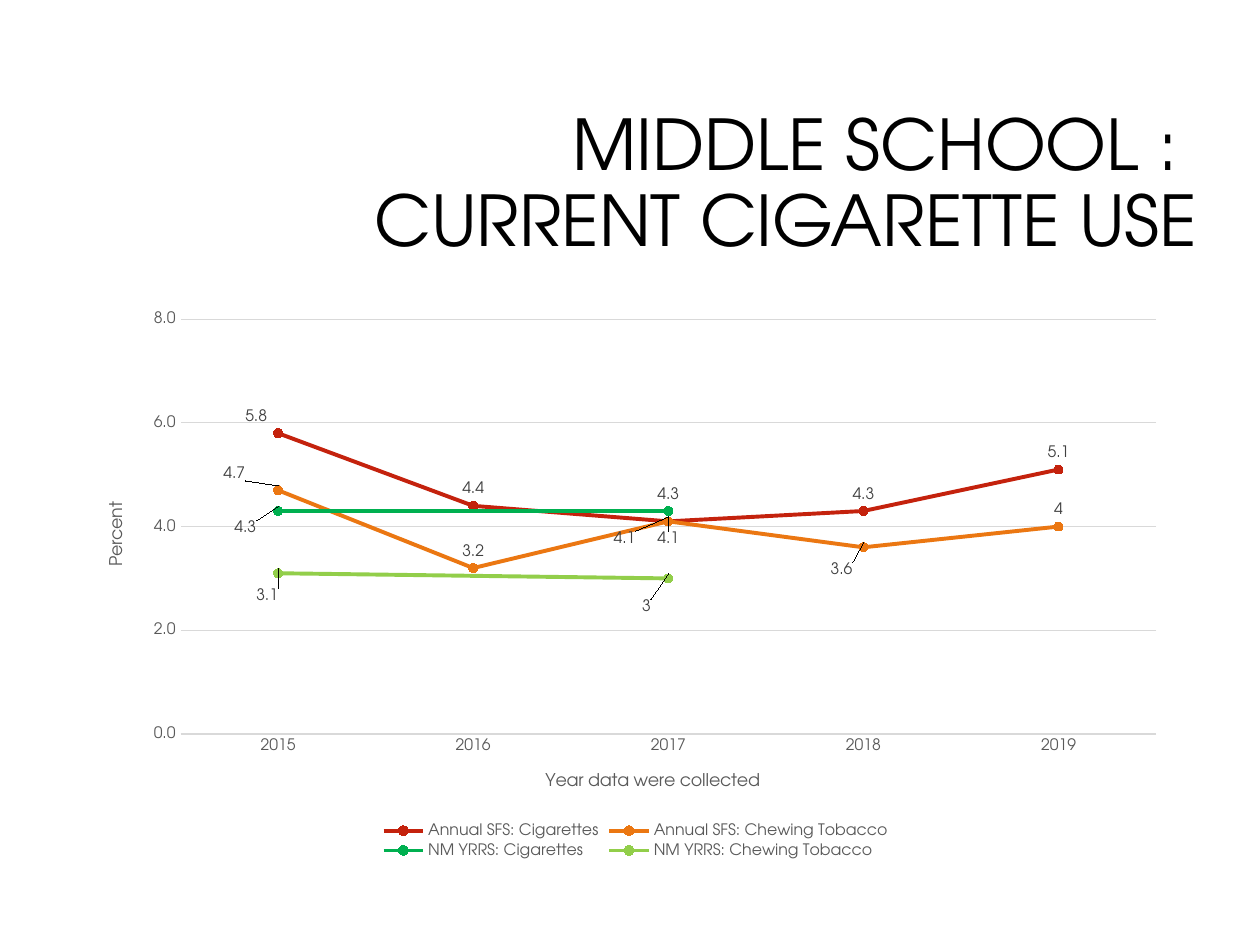
"""Build a slide charting middle school tobacco use by year."""
from dataclasses import dataclass, field

from lxml import etree
from pptx import Presentation
from pptx import util as u
from pptx.chart.data import CategoryChartData
from pptx.dml.color import RGBColor
from pptx.enum import chart as kinds
from pptx.enum import dml, text
from pptx.oxml.ns import qn


@dataclass(frozen=True)
class Theme:
    font: str = "TeX Gyre Adventor"
    ink: str = "000000"
    muted: str = "595959"
    label: str = "404040"
    grid: str = "D9D9D9"
    heading: int = 40
    axis_title: int = 10
    small: int = 9
    line: float = 2.25
    hairline: float = 0.75
    marker: int = 5


@dataclass(frozen=True)
class Trend:
    name: str
    values: tuple[float | None, ...]
    color: str
    label_shifts: dict[int, tuple[float, float]] = field(default_factory=dict)


THEME = Theme()
YEARS = ("2015", "2016", "2017", "2018", "2019")
TRENDS = (
    Trend("Annual SFS: Cigarettes", (5.8, 4.4, 4.1, 4.3, 5.1), "C4220D",
          {0: (-0.02, 0), 2: (-0.04, 0.06)}),
    Trend("Annual SFS: Chewing Tobacco", (4.7, 3.2, 4.1, 3.6, 4), "EB7712",
          {0: (-0.04, 0), 1: (0, 0), 2: (0, 0.06), 3: (-0.02, 0.07)}),
    Trend("NM YRRS: Cigarettes", (4.3, None, 4.3, None, None), "00B050",
          {0: (-0.03, 0.06)}),
    Trend("NM YRRS: Chewing Tobacco", (3.1, None, 3, None, None), "92CE4A",
          {0: (-0.01, 0.07), 2: (-0.02, 0.08)}),
)


def style_font(font, size: float, color: str) -> None:
    font.name = THEME.font
    font.size = u.Pt(size)
    font.bold = False
    font.color.rgb = RGBColor.from_string(color)


def style_line(line, width: float, color: str) -> None:
    line.width = u.Pt(width)
    line.color.rgb = RGBColor.from_string(color)


def set_layout(parent, after: str, **settings) -> None:
    for old in parent.findall(qn("c:layout")):
        parent.remove(old)
    layout = etree.Element(qn("c:layout"))
    manual = etree.SubElement(layout, qn("c:manualLayout"))
    for tag, value in settings.items():
        etree.SubElement(manual, qn(f"c:{tag}")).set("val", str(value))
    if after:
        parent.find(qn(after)).addnext(layout)
    else:
        parent.insert(0, layout)


def add_heading(page) -> None:
    box = page.shapes.add_textbox(u.Inches(2.58), u.Inches(0.62), u.Inches(7.02), u.Inches(1.71))
    frame = box.text_frame
    frame.word_wrap = True
    frame.vertical_anchor = text.MSO_ANCHOR.MIDDLE
    para = frame.paragraphs[0]
    para.alignment = text.PP_ALIGN.RIGHT
    para.line_spacing = 0.9
    for index, line in enumerate(("MIDDLE SCHOOL : ", "CURRENT CIGARETTE USE")):
        if index:
            para.add_line_break()
        span = para.add_run()
        span.text = line
        style_font(span.font, THEME.heading, THEME.ink)


def style_axis(axis, title: str, left: float, top: float) -> None:
    axis.major_tick_mark = axis.minor_tick_mark = kinds.XL_TICK_MARK.NONE
    style_font(axis.tick_labels.font, THEME.small, THEME.muted)
    span = axis.axis_title.text_frame.paragraphs[0].add_run()
    span.text = title
    style_font(span.font, THEME.axis_title, THEME.muted)
    set_layout(axis.axis_title._element, "c:tx", xMode="edge", yMode="edge", x=left, y=top)


def style_trend(series, trend: Trend) -> None:
    series.smooth = False
    style_line(series.format.line, THEME.line, trend.color)
    marker = series.marker
    marker.style = kinds.XL_MARKER_STYLE.CIRCLE
    marker.size = THEME.marker
    marker.format.fill.solid()
    marker.format.fill.fore_color.rgb = RGBColor.from_string(trend.color)
    style_line(marker.format.line, THEME.hairline, trend.color)
    labels = series.data_labels
    labels.show_value = True
    labels.position = kinds.XL_LABEL_POSITION.ABOVE
    style_font(labels.font, THEME.small, THEME.label)
    for index, (across, down) in trend.label_shifts.items():
        label = series.points[index].data_label
        label.position = kinds.XL_LABEL_POSITION.ABOVE
        style_font(label.font, THEME.small, THEME.label)
        entry = labels._element.find(f"{qn('c:dLbl')}[{qn('c:idx')}][@val]")
        for entry in labels._element.findall(qn("c:dLbl")):
            if entry.find(qn("c:idx")).get("val") == str(index):
                set_layout(entry, "c:idx", x=across, y=down)


def add_trend_chart(page) -> None:
    data = CategoryChartData()
    data.categories = YEARS
    for trend in TRENDS:
        data.add_series(trend.name, trend.values)
    chart = page.shapes.add_chart(
        kinds.XL_CHART_TYPE.LINE_MARKERS, u.Inches(0.65), u.Inches(2.4),
        u.Inches(8.7), u.Inches(4.45), data).chart
    style_font(chart.font, THEME.axis_title, THEME.ink)
    chart.has_title = False
    chart.plots[0].vary_by_categories = False

    years, percent = chart.category_axis, chart.value_axis
    style_axis(years, "Year data were collected", 0.42, 0.83)
    style_line(years.format.line, THEME.hairline, THEME.grid)
    style_axis(percent, "Percent", 0.02, 0.35)
    percent.axis_title.text_frame._txBody.bodyPr.set("rot", "-5400000")
    percent.minimum_scale, percent.maximum_scale, percent.major_unit = 0, 8, 2
    percent.tick_labels.number_format = "#,##0.0"
    percent.tick_labels.number_format_is_linked = False
    percent.format.line.fill.background()
    style_line(percent.major_gridlines.format.line, THEME.hairline, THEME.grid)

    for series, trend in zip(chart.plots[0].series, TRENDS):
        style_trend(series, trend)

    chart.has_legend = True
    legend = chart.legend
    legend.position = kinds.XL_LEGEND_POSITION.BOTTOM
    legend.include_in_layout = False
    style_font(legend.font, THEME.small, THEME.muted)
    set_layout(legend._element, "c:legendPos", xMode="edge", yMode="edge",
               x=0.27, y=0.92, w=0.47, h=0.08)
    body = chart._chartSpace.chart
    set_layout(body.plotArea, "", layoutTarget="inner", xMode="edge", yMode="edge",
               x=0.09, y=0.03, w=0.89, h=0.74)
    body.find(qn("c:dispBlanksAs")).set("val", "span")


def main() -> None:
    deck = Presentation()
    deck.slide_width, deck.slide_height = u.Inches(10), u.Inches(7.5)
    page = deck.slides.add_slide(deck.slide_layouts[6])
    add_heading(page)
    add_trend_chart(page)
    deck.save("out.pptx")


if __name__ == "__main__":
    main()
